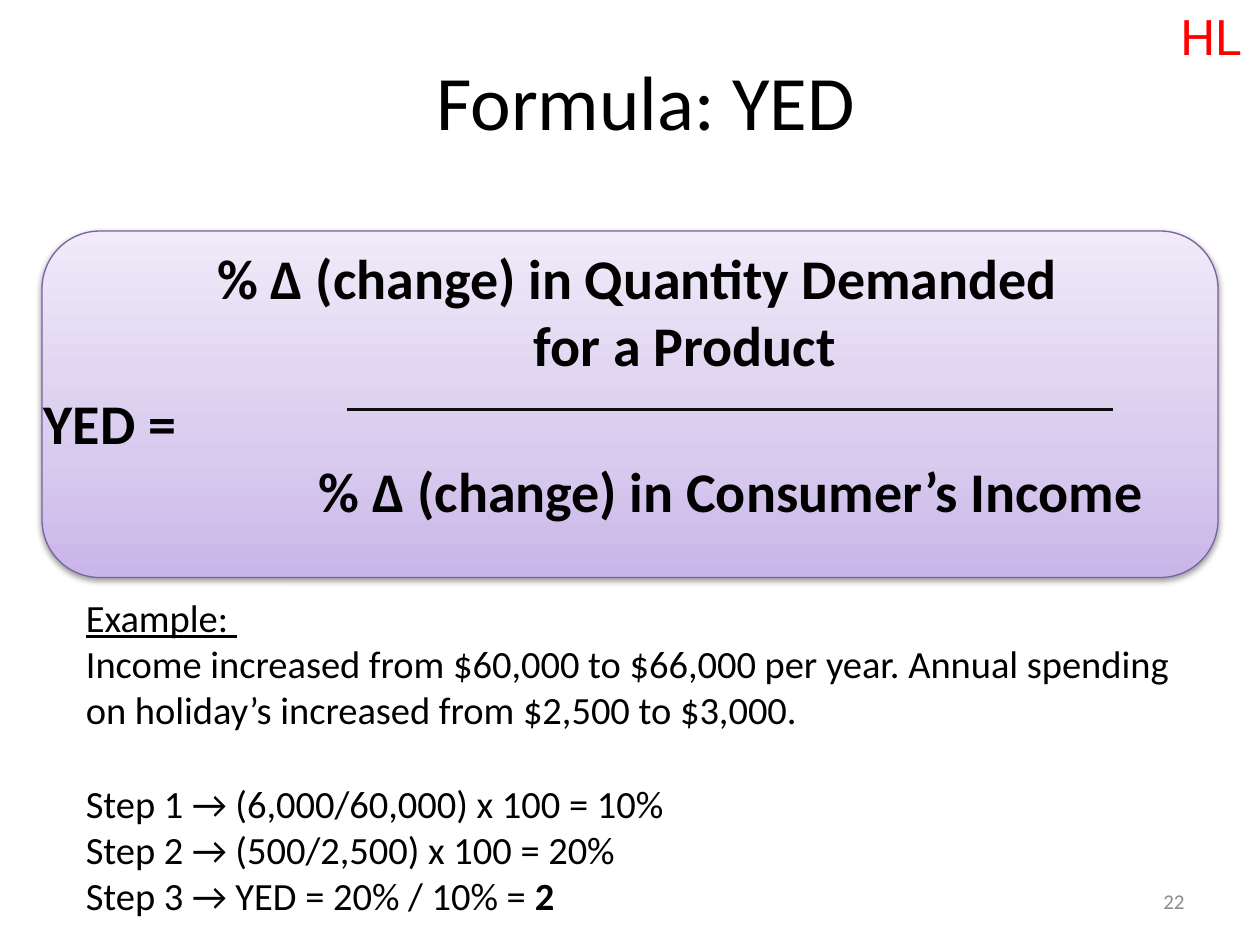
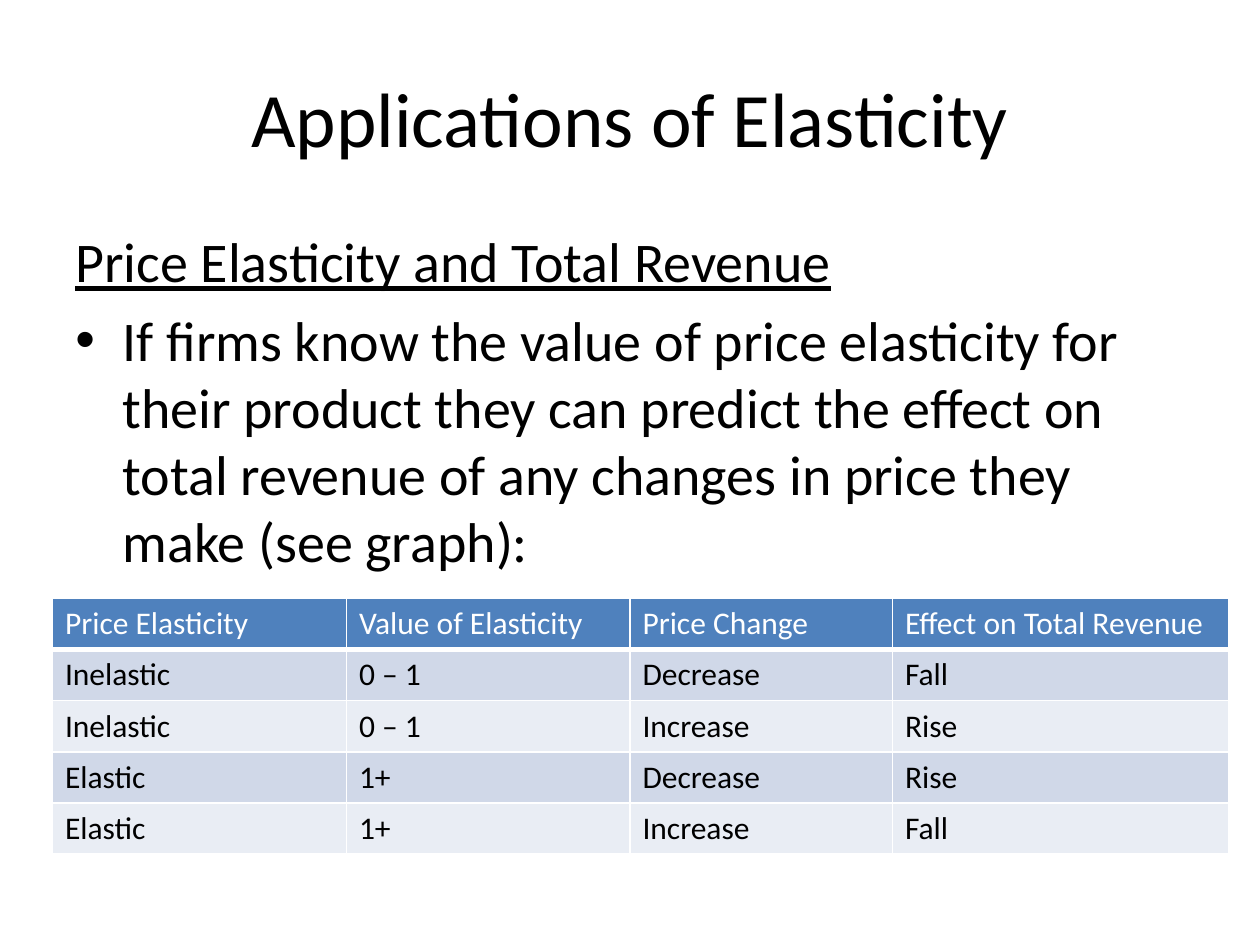
from lxml.etree import SubElement
from pptx import Presentation
from pptx.dml.color import RGBColor
from pptx.enum.shapes import MSO_CONNECTOR as CONN, MSO_SHAPE as SHAPE
from pptx.enum.text import MSO_ANCHOR as ANCHOR, PP_ALIGN as ALIGN
from pptx.oxml import parse_xml
from pptx.oxml.ns import nsdecls, qn
from pptx.util import Pt

BLACK, WHITE, GREY, RED = "000000", "FFFFFF", "8C8C8C", "FF0000"
PURPLE, RULE = "7D60A0", "0D0D0D"
PANEL_STOPS = [(0, "C9B5E8"), (35, "D8CBEE"), (100, "F0EAF9")]
HEADER, BANDS = "4F81BD", ("D0D8E8", "E9EDF4")

TITLE = {"size": 44}
BODY = {"size": 32}
FORMULA = {"size": 32, "bold": True}
EXAMPLE = {"size": 22}
CELL = {"size": 18, "bold": False}

FORMULA_LINES = [
    ("% ∆ (change) in Quantity Demanded", 99, 0),
    ("for a Product", 280, 0),
    ("YED =", 0, 6.4),
    ("% ∆ (change) in Consumer’s Income", 157, 0),
]
EXAMPLE_LINES = [
    "Income increased from $60,000 to $66,000 per year. Annual spending "
    "on holiday’s increased from $2,500 to $3,000.",
    "Step 1 → (6,000/60,000) x 100 = 10%",
    "Step 2 → (500/2,500) x 100 = 20%",
    "Step 3 → YED = 20% / 10% = ",
]
REVENUE_ROWS = [
    ("Price Elasticity", "Value of Elasticity", "Price Change", "Effect on Total Revenue"),
    ("Inelastic", "0 – 1", "Decrease", "Fall"),
    ("Inelastic", "0 – 1", "Increase", "Rise"),
    ("Elastic", "1+", "Decrease", "Rise"),
    ("Elastic", "1+", "Increase", "Fall"),
]
REVENUE_WIDTHS = (168, 162, 150, 192)


def rgb(value):
    return RGBColor.from_string(value)


def add_run(p, text, size=18, color=BLACK, font="Calibri", **formats):
    r = p.add_run()
    r.text = text
    r.font.color.rgb = rgb(color)
    for name, value in {"size": Pt(size), "name": font, **formats}.items():
        setattr(r.font, name, value)


def add_par(tf, before=0, indent=0, hanging=0, bullet=None, align=ALIGN.LEFT):
    p = tf.paragraphs[0]
    if p.runs:
        p = tf.add_paragraph()
    p.space_before, p.alignment = Pt(before), align
    props = p._p.get_or_add_pPr()
    props.set("marL", str(Pt(indent)))
    props.set("indent", str(Pt(-hanging)))
    if bullet:
        SubElement(props, qn("a:buFont"), typeface="Arial")
        SubElement(props, qn("a:buChar"), char=bullet)
    return p


def text_frame(s, box, anchor=ANCHOR.TOP):
    tf = s.shapes.add_textbox(*map(Pt, box)).text_frame
    tf.word_wrap, tf.vertical_anchor = True, anchor
    return tf


def label(s, box, text, align=ALIGN.CENTER, anchor=ANCHOR.MIDDLE, **formats):
    add_run(add_par(text_frame(s, box, anchor), align=align), text, **formats)


def formula_panel(s, box):
    x, y, w, h = box
    panel = s.shapes.add_shape(SHAPE.ROUNDED_RECTANGLE, *map(Pt, box))
    panel.fill.gradient()
    panel.fill.gradient_angle = 90
    props = panel._element.spPr
    stops = props.find(".//" + qn("a:gsLst"))
    stops.clear()
    for pos, color in PANEL_STOPS:
        stop = SubElement(stops, qn("a:gs"), pos=str(pos * 1000))
        SubElement(stop, qn("a:srgbClr"), val=color)
    panel.line.color.rgb, panel.line.width = rgb(PURPLE), Pt(0.75)
    panel.shadow.inherit = False
    props.find(qn("a:effectLst")).append(parse_xml(
        f'<a:outerShdw {nsdecls("a")} blurRad="{Pt(3.1)}" dist="{Pt(1.6)}" dir="5400000" '
        f'rotWithShape="0"><a:srgbClr val="{BLACK}"><a:alpha val="38000"/></a:srgbClr>'
        '</a:outerShdw>'))

    tf = text_frame(s, (x - 6, y + 3.5, w, h - 20))
    for text, indent, before in FORMULA_LINES:
        add_run(add_par(tf, before, indent), text, **FORMULA)

    ends = (x + 174, y + 102, x + 612, y + 102)
    bar = s.shapes.add_connector(CONN.STRAIGHT, *map(Pt, ends))
    bar.line.color.rgb, bar.line.width = rgb(RULE), Pt(2.25)
    SubElement(bar._element.spPr, qn("a:effectLst"))


def worked_example(s, box):
    tf = text_frame(s, box)
    add_run(add_par(tf), "Example: ", underline=True, **EXAMPLE)
    for i, text in enumerate(EXAMPLE_LINES):
        p = add_par(tf, before=26.9 if i == 1 else 0)
        add_run(p, text, **EXAMPLE)
    add_run(p, "2", bold=True, **EXAMPLE)


def revenue_text(s, box):
    tf = text_frame(s, box)
    add_run(add_par(tf, indent=27, hanging=27),
            "Price Elasticity and Total Revenue", underline=True, **BODY)
    add_run(add_par(tf, 6.4, 27, 27, "•"),
            "If firms know the value of price elasticity for their product they can "
            "predict the effect on total revenue of any changes in price they make "
            "(see graph):", **BODY)


def cell_borders(cell, bottom):
    props = cell._tc.get_or_add_tcPr()
    for side, width in {"L": 1, "R": 1, "T": 1, "B": bottom}.items():
        ln = SubElement(props, qn(f"a:ln{side}"), w=str(Pt(width)))
        SubElement(SubElement(ln, qn("a:solidFill")), qn("a:srgbClr"), val=WHITE)


def revenue_table(s, box):
    table = s.shapes.add_table(len(REVENUE_ROWS), len(REVENUE_WIDTHS), *map(Pt, box)).table
    for column, width in zip(table.columns, REVENUE_WIDTHS):
        column.width = Pt(width)
    for i, texts in enumerate(REVENUE_ROWS):
        table.rows[i].height = Pt(box[3] / len(REVENUE_ROWS))
        for j, text in enumerate(texts):
            cell = table.cell(i, j)
            cell_borders(cell, 1 if i else 3)
            cell.fill.solid()
            cell.fill.fore_color.rgb = rgb(BANDS[(i - 1) % 2] if i else HEADER)
            add_run(add_par(cell.text_frame), text, color=BLACK if i else WHITE, **CELL)


def formula_slide(s):
    formula_panel(s, (24, 132, 672, 198))
    label(s, (48, 18, 642, 78), "Formula: YED", **TITLE)
    label(s, (516, 500.5, 168, 28.8), "22", ALIGN.RIGHT, size=12, color=GREY)
    worked_example(s, (42, 336, 648, 194))
    label(s, (664, 0, 56, 41), "HL", anchor=ANCHOR.TOP, size=28, color=RED, font="Roboto")


def applications_slide(s):
    label(s, (36, 21.6, 648, 90), "Applications of Elasticity", **TITLE)
    revenue_text(s, (36, 126, 648, 356))
    revenue_table(s, (30, 342, 672, 146))


def main():
    prs = Presentation()
    prs.slide_width, prs.slide_height = Pt(720), Pt(540)
    for build in (formula_slide, applications_slide):
        build(prs.slides.add_slide(prs.slide_layouts[6]))
    prs.save("out.pptx")


if __name__ == "__main__":
    main()
